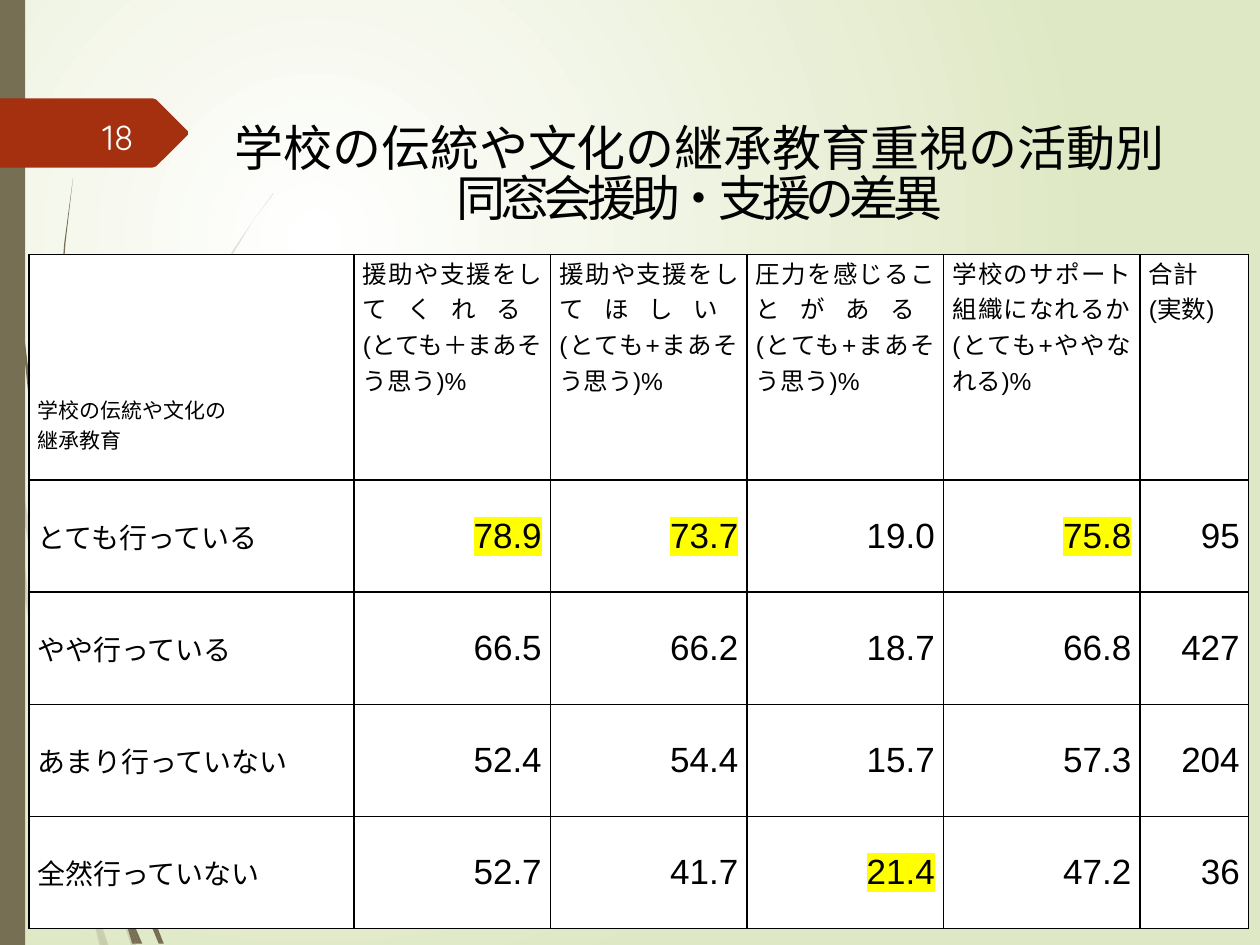
from lxml import etree
from pptx import Presentation
from pptx.dml.color import RGBColor
from pptx.enum.shapes import MSO_SHAPE
from pptx.enum.text import MSO_ANCHOR, PP_ALIGN
from pptx.oxml.ns import qn
from pptx.util import Inches, Pt

BLACK = RGBColor(0x00, 0x00, 0x00)
WHITE = RGBColor(0xFF, 0xFF, 0xFF)
NUMBER_WHITE = RGBColor(0xFE, 0xFF, 0xFF)
PALE_GREEN = RGBColor(0xDF, 0xE8, 0xC4)
OLIVE = RGBColor(0x76, 0x6F, 0x54)
RUST = RGBColor(0xA5, 0x30, 0x10)
YELLOW = RGBColor(0xFF, 0xFF, 0x00)

RECTANGLE = MSO_SHAPE.RECTANGLE
TOP, MIDDLE, BOTTOM = MSO_ANCHOR.TOP, MSO_ANCHOR.MIDDLE, MSO_ANCHOR.BOTTOM
CENTER, RIGHT, JUSTIFY = PP_ALIGN.CENTER, PP_ALIGN.RIGHT, PP_ALIGN.JUSTIFY

# Outlines of the grass blades, in inches
FAINT_BLADES = [
    [(0.08, 3.5), (0.06, 3.22), (0, 2.82), (0, 2.99), (0.07, 3.44)],
    [(0.4, 5.22), (0.59, 5.99), (0.59, 5.86), (0.43, 5.2), (0.1, 3.45), (0.12, 3.76)],
    [(0.64, 6.07), (0.61, 5.96), (0.61, 6.1), (0.85, 6.94), (1.04, 7.5), (1.08, 7.5),
     (0.88, 6.92)],
    [(0.83, 7.5), (0.86, 7.5), (0.73, 7.11)],
    [(0.64, 6.83), (0.48, 6.19), (0.22, 4.69), (0.12, 3.76), (0.08, 3.5), (0.19, 4.7),
     (0.45, 6.21), (0.64, 6.93), (0.7, 7.14), (0.69, 7.07)],
    [(0.58, 5.99), (0.6, 6.46), (0.64, 6.83), (0.67, 6.92), (0.73, 7.11), (0.72, 7.06),
     (0.63, 6.46), (0.61, 6.1), (0.61, 6.08)],
    [(0.61, 5.84), (0.76, 4.62), (1.11, 3.49), (1.59, 2.45), (1.87, 1.98), (2.01, 1.75),
     (2.17, 1.54), (2.17, 1.53), (2.01, 1.75), (1.86, 1.97), (1.58, 2.44), (1.1, 3.48),
     (0.75, 4.61), (0.59, 5.84), (0.59, 5.86), (0.61, 5.96)],
    [(0.7, 7.14), (0.79, 7.5), (0.82, 7.5)],
    [(0.61, 6.08), (0.61, 6.1), (0.61, 5.96), (0.59, 5.86), (0.58, 5.99)],
    [(0.67, 6.92), (0.65, 6.83), (0.69, 7.07), (0.7, 7.14), (0.82, 7.5), (0.83, 7.5),
     (0.73, 7.11)],
]
SOLID_BLADES = [
    [(0.05, 1.1), (0.14, 2.33), (0.27, 3.55), (0.46, 4.77), (0.47, 4.81), (0.45, 4.57),
     (0.45, 4.53), (0.3, 3.55), (0.15, 2.32), (0.06, 1.09), (0.04, 0.48), (0.03, 0),
     (0.02, 0), (0.03, 0.48)],
    [(0.73, 5.92), (0.88, 6.45), (0.88, 6.31), (0.77, 5.9), (0.5, 4.72), (0.53, 5.05)],
    [(0.94, 6.49), (0.91, 6.41), (0.91, 6.56), (1.09, 7.08), (1.26, 7.49), (1.3, 7.49),
     (1.13, 7.06)],
    [(0.91, 6.91), (0.81, 6.57), (0.6, 5.56), (0.53, 5.05), (0.47, 4.77), (0.56, 5.57),
     (0.77, 6.59), (0.92, 7.08), (0.97, 7.22), (0.96, 7.17)],
    [(0.5, 4.72), (0.48, 4.53), (0.44, 3.49), (0.48, 2.45), (0.52, 1.93), (0.58, 1.41),
     (0.51, 1.93), (0.47, 2.45), (0.43, 3.49), (0.45, 4.49), (0.49, 4.72)],
    [(1.1, 7.49), (1.13, 7.49), (1, 7.19)],
    [(0.47, 4.77), (0.53, 5.05), (0.5, 4.72), (0.49, 4.72), (0.45, 4.49), (0.45, 4.53)],
    [(0.91, 6.33), (1.03, 5.52), (1.31, 4.76), (1.69, 4.06), (1.91, 3.74), (2.03, 3.59),
     (2.16, 3.44), (2.15, 3.44), (2.03, 3.58), (1.91, 3.73), (1.68, 4.05), (1.29, 4.74),
     (1.01, 5.51), (0.88, 6.31), (0.91, 6.41)],
    [(0.97, 7.22), (1.05, 7.49), (1.08, 7.49)],
    [(0.88, 6.45), (0.91, 6.91), (0.96, 7.06), (1, 7.19), (1, 7.16), (0.91, 6.56),
     (0.9, 6.51)],
    [(0.88, 6.45), (0.9, 6.51), (0.91, 6.56), (0.91, 6.41), (0.88, 6.31)],
    [(0.96, 7.06), (0.91, 6.91), (0.96, 7.17), (0.97, 7.22), (1.08, 7.49), (1.1, 7.49),
     (1, 7.19)],
]
NUMBER_TAG = [(0, 0.78), (1.21, 0.78), (1.24, 0.79), (1.49, 1.04), (1.49, 1.07),
              (1.24, 1.32), (1.21, 1.33), (0, 1.33)]

COLUMN_WIDTHS = [2.58, 1.56, 1.56, 1.56, 1.56, 0.86]
ROW_HEIGHTS = [1.79, 0.89, 0.89, 0.89, 0.89]
CORNER = ["学校の伝統や文化の", "継承教育"]
HEADINGS = [
    ["援助や支援をしてくれる\v(とても＋まあそう思う)%"],
    ["援助や支援をしてほしい\v(とても+まあそう思う)%"],
    ["圧力を感じることがある\v(とても+まあそう思う)%"],
    ["学校のサポート組織になれるか\v(とても+ややなれる)%"],
    ["合計", "(実数)"],
]
ROWS = [
    ("とても行っている", "78.9", "73.7", "19.0", "75.8", "95"),
    ("やや行っている", "66.5", "66.2", "18.7", "66.8", "427"),
    ("あまり行っていない", "52.4", "54.4", "15.7", "57.3", "204"),
    ("全然行っていない", "52.7", "41.7", "21.4", "47.2", "36"),
]
HIGHLIGHTED = {"78.9", "73.7", "75.8", "21.4"}


def add_color_element(parent, tag, color, alpha=None):
    holder = etree.SubElement(parent, qn(tag))
    value = etree.SubElement(holder, qn("a:srgbClr"), val=str(color))
    if alpha is not None:
        etree.SubElement(value, qn("a:alpha"), val=str(alpha * 1000))
    return holder


def paint_background(page):
    fill = page.background.fill
    fill.gradient()
    for stop, color in zip(fill.gradient_stops, (WHITE, PALE_GREEN)):
        stop.color.rgb = color
    # Turn the linear gradient into a circular one
    linear = page.background._cSld.find(".//" + qn("a:lin"))
    circle = etree.Element(qn("a:path"), path="circle")
    etree.SubElement(circle, qn("a:fillToRect"), l="50000", t="50000", r="100000", b="100000")
    linear.getparent().replace(linear, circle)


def paint(shape, color, alpha=None):
    shape.shadow.inherit = False
    shape.fill.solid()
    shape.fill.fore_color.rgb = color
    shape.line.fill.background()
    if alpha is not None:
        value = shape._element.spPr.find(qn("a:solidFill")).find(qn("a:srgbClr"))
        etree.SubElement(value, qn("a:alpha"), val=str(alpha * 1000))


def add_outline(page, points, color, alpha=None):
    corners = [(Inches(x), Inches(y)) for x, y in points]
    builder = page.shapes.build_freeform(*corners[0])
    builder.add_line_segments(corners[1:], close=True)
    paint(builder.convert_to_shape(), color, alpha)


def format_paragraph(para, size, align, color=BLACK, font="Arial"):
    para.alignment = align
    para.font.size = Pt(size)
    para.font.name = font
    para.font.color.rgb = color


def add_borders(cell):
    properties = cell._tc.get_or_add_tcPr()
    for position, side in enumerate(("a:lnL", "a:lnR", "a:lnT", "a:lnB")):
        border = etree.Element(qn(side), w=str(Pt(1)))
        add_color_element(border, "a:solidFill", BLACK)
        properties.insert(position, border)


def fill_cell(cell, lines, size, align, anchor, bottom=0):
    cell.fill.solid()
    cell.fill.fore_color.rgb = WHITE
    add_borders(cell)
    cell.margin_left = cell.margin_right = Inches(0.07)
    cell.margin_top, cell.margin_bottom = 0, Inches(bottom)
    cell.vertical_anchor = anchor
    frame = cell.text_frame
    for index, line in enumerate(lines):
        para = frame.paragraphs[0] if index == 0 else frame.add_paragraph()
        para.text = line
        format_paragraph(para, size, align)
        if line in HIGHLIGHTED:
            add_color_element(para.runs[0]._r.get_or_add_rPr(), "a:highlight", YELLOW)


def add_support_table(page):
    frame = page.shapes.add_table(
        len(ROW_HEIGHTS), len(COLUMN_WIDTHS), Inches(0.23), Inches(2.02),
        Inches(sum(COLUMN_WIDTHS)), Inches(sum(ROW_HEIGHTS)))
    table = frame.table
    table.first_row = table.horz_banding = False
    for column, width in zip(table.columns, COLUMN_WIDTHS):
        column.width = Inches(width)
    for row, height in zip(table.rows, ROW_HEIGHTS):
        row.height = Inches(height)
    fill_cell(table.cell(0, 0), CORNER, 12, JUSTIFY, BOTTOM, bottom=0.2)
    for column, lines in enumerate(HEADINGS, 1):
        fill_cell(table.cell(0, column), lines, 14, JUSTIFY, TOP)
    for row, (label, *values) in enumerate(ROWS, 1):
        fill_cell(table.cell(row, 0), [label], 16, JUSTIFY, MIDDLE)
        for column, value in enumerate(values, 1):
            fill_cell(table.cell(row, column), [value], 20, RIGHT, MIDDLE)


def add_page_number(page):
    box = page.shapes.add_textbox(Inches(-1.17), Inches(0.88), Inches(2.33), Inches(0.4))
    box.text_frame.word_wrap = True
    box.text_frame.vertical_anchor = MIDDLE
    para = box.text_frame.paragraphs[0]
    para.text = "18"
    format_paragraph(para, 20, RIGHT, NUMBER_WHITE, "Quicksand")


def set_title(page):
    title = page.shapes.title
    title.left, title.top = Inches(0.67), Inches(0.96)
    title.width, title.height = Inches(9.76), Inches(1.04)
    title.text_frame.vertical_anchor = TOP
    para = title.text_frame.paragraphs[0]
    para.add_run().text = "学校の伝統や文化の継承教育重視の活動別"
    para.add_line_break()
    span = para.add_run()
    span.text = "同窓会援助・支援の差異"
    span._r.get_or_add_rPr().set("spc", "-300")
    format_paragraph(para, 28, CENTER)
    para.line_spacing = 0.84


def main():
    deck = Presentation()
    deck.slide_width, deck.slide_height = Inches(10), Inches(7.5)
    page = deck.slides.add_slide(deck.slide_layouts[5])
    paint_background(page)
    # Grass blades, side bar and number tag
    for blade in FAINT_BLADES:
        add_outline(page, blade, OLIVE, alpha=20)
    for blade in SOLID_BLADES:
        add_outline(page, blade, OLIVE)
    paint(page.shapes.add_shape(RECTANGLE, 0, 0, Inches(0.2), Inches(7.5)), OLIVE)
    add_outline(page, NUMBER_TAG, RUST)
    # Content
    add_support_table(page)
    add_page_number(page)
    set_title(page)
    deck.save("out.pptx")


if __name__ == "__main__":
    main()
